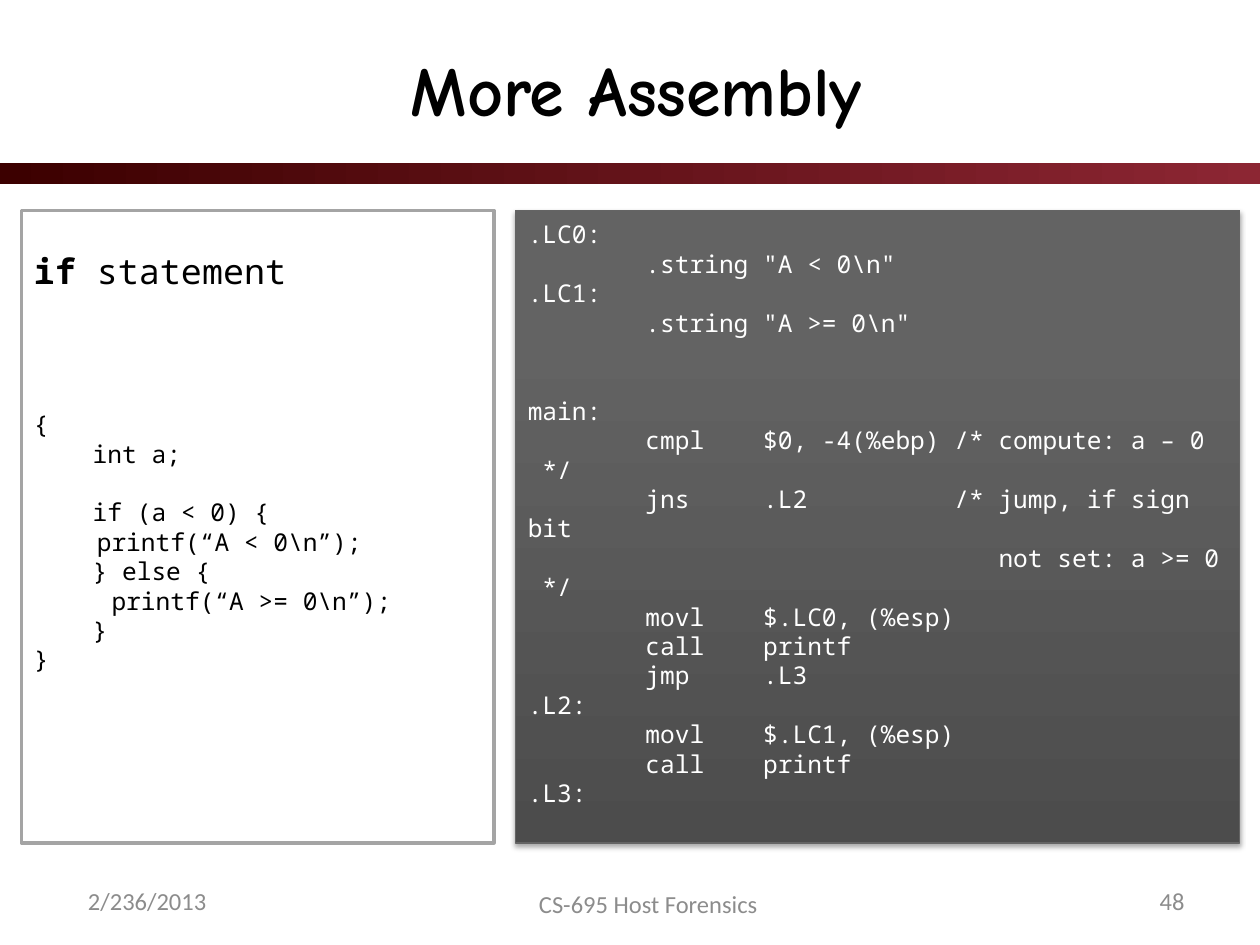
from dataclasses import dataclass

from lxml.etree import SubElement
from pptx import Presentation
from pptx.dml.color import RGBColor
from pptx.enum.shapes import MSO_SHAPE
from pptx.enum.text import MSO_ANCHOR, PP_ALIGN
from pptx.oxml.ns import qn
from pptx.util import Inches, Pt


@dataclass(frozen=True)
class Theme:
    ink: str = "000000"
    paper: str = "FFFFFF"
    muted: str = "8C8C8C"
    frame: str = "A4A4A4"
    edge: str = "646464"
    bar: tuple = ("3C0000", "8C2633")
    panel: tuple = ("4C4C4C", "636363")
    head: str = "Comic Neue"
    body: str = "Calibri"
    mono: str = "Noto Sans Mono"
    title: int = 40
    topic: int = 20
    text: int = 14


THEME = Theme()
LEAD = 1.2  # line pitch as a multiple of the type size
ROW = THEME.text * LEAD

# Each line: (text, blank rows before it)
SOURCE = [
    ("{", 4),
    ("    int a;", 0),
    ("    if (a < 0) {", 1),
    ("\tprintf(“A < 0\\n”);", 0),
    ("    } else {", 0),
    ("\t printf(“A >= 0\\n”);", 0),
    ("    }", 0),
    ("}", 0),
]
LISTING = [
    (".LC0:", 0),
    ('        .string "A < 0\\n"', 0),
    (".LC1:", 0),
    ('        .string "A >= 0\\n"', 0),
    ("main:", 2),
    ("        cmpl    $0, -4(%ebp) /* compute: a – 0   */", 0),
    ("        jns     .L2          /* jump, if sign bit", 0),
    ("                                not set: a >= 0  */", 0),
    ("        movl    $.LC0, (%esp)", 0),
    ("        call    printf", 0),
    ("        jmp     .L3", 0),
    (".L2:", 0),
    ("        movl    $.LC1, (%esp)", 0),
    ("        call    printf", 0),
    (".L3:", 0),
]
FOOTER = [
    ("2/236/2013", 0.6, 6.95, 1.83, PP_ALIGN.LEFT),
    ("CS-695 Host Forensics", 3.9, 6.97, 2.49, PP_ALIGN.CENTER),
    ("48", 7.67, 6.95, 1.83, PP_ALIGN.RIGHT),
]


def rgb(code):
    return RGBColor.from_string(code)


def put(item, **values):
    for name, value in values.items():
        setattr(item, name, value)


def place(shape, *box):
    names = ("left", "top", "width", "height")
    put(shape, **dict(zip(names, map(Inches, box))))


def style(font, name, size, color, bold=False):
    put(font, name=name, size=Pt(size), bold=bold)
    font.color.rgb = rgb(color)


def add_rect(slide, *box):
    shape = slide.shapes.add_shape(MSO_SHAPE.RECTANGLE, *map(Inches, box))
    shape.shadow.inherit = False
    return shape


def shade(shape, colors, angle, end=1.0):
    """Fill with two colours, the second reached at the end position."""
    shape.fill.gradient()
    shape.fill.gradient_angle = angle
    for stop, color, spot in zip(shape.fill.gradient_stops, colors, (0, end)):
        stop.color.rgb = rgb(color)
        stop.position = spot


def outline(shape, color, width):
    shape.line.color.rgb = rgb(color)
    shape.line.width = Pt(width)


def drop(shape):
    """Cast a soft shadow straight down."""
    effects = shape._element.spPr.find(qn("a:effectLst"))
    outer = SubElement(effects, qn("a:outerShdw"), blurRad=str(Pt(3.1)),
                       dist=str(Pt(1.8)), dir="5400000", rotWithShape="0")
    color = SubElement(outer, qn("a:srgbClr"), val=THEME.ink)
    SubElement(color, qn("a:alpha"), val="35000")


def code_frame(shape, inset):
    frame = shape.text_frame
    put(frame, word_wrap=True, vertical_anchor=MSO_ANCHOR.TOP,
        margin_top=Inches(inset))
    return frame


def add_line(frame, parts, size, color, gap=0):
    """Write one line of (text, bold) parts, in the first paragraph if unused."""
    para = frame.paragraphs[0]
    if para.runs:
        para = frame.add_paragraph()
    put(para, alignment=PP_ALIGN.LEFT, line_spacing=Pt(size * LEAD),
        space_before=Pt(gap * ROW))
    for text, bold in parts:
        run = para.add_run()
        run.text = text
        style(run.font, THEME.mono, size, color, bold)


def add_code(frame, lines, color):
    for text, gap in lines:
        add_line(frame, [(text, False)], THEME.text, color, gap)


def add_title(slide, text):
    title = slide.shapes.title
    place(title, 0.6, 0.15, 8.9, 1.1)
    title.text_frame.text = text
    title.text_frame.vertical_anchor = MSO_ANCHOR.MIDDLE
    para = title.text_frame.paragraphs[0]
    para.alignment = PP_ALIGN.CENTER
    style(para.runs[0].font, THEME.head, THEME.title, THEME.ink, True)


def add_bar(slide):
    bar = add_rect(slide, 0, 1.29, 10, 0.17)
    shade(bar, THEME.bar, 0)
    bar.line.fill.background()


def add_note(slide, text, left, top, width, align):
    box = slide.shapes.add_textbox(*map(Inches, (left, top, width, 0.4)))
    frame = box.text_frame
    put(frame, word_wrap=True, vertical_anchor=MSO_ANCHOR.MIDDLE, text=text)
    para = frame.paragraphs[0]
    para.alignment = align
    style(para.runs[0].font, THEME.body, THEME.text, THEME.muted)


def add_listing(slide):
    panel = add_rect(slide, 4.09, 1.67, 5.75, 5.02)
    shade(panel, THEME.panel, 90, 0.8)
    outline(panel, THEME.edge, 0.75)
    drop(panel)
    add_code(code_frame(panel, 0.07), LISTING, THEME.paper)


def add_source(slide):
    panel = add_rect(slide, 0.17, 1.67, 3.75, 5.02)
    panel.fill.solid()
    panel.fill.fore_color.rgb = rgb(THEME.paper)
    outline(panel, THEME.frame, 2)
    frame = code_frame(panel, 0.31)
    topic = [("if", True), (" statement", False)]
    add_line(frame, topic, THEME.topic, THEME.ink)
    add_code(frame, SOURCE, THEME.ink)


def main():
    deck = Presentation()
    put(deck, slide_width=Inches(10), slide_height=Inches(7.5))
    slide = deck.slides.add_slide(deck.slide_layouts.get_by_name("Title Only"))
    add_bar(slide)
    add_title(slide, "More Assembly")
    for note in FOOTER:
        add_note(slide, *note)
    add_listing(slide)
    add_source(slide)
    deck.save("out.pptx")


if __name__ == "__main__":
    main()
